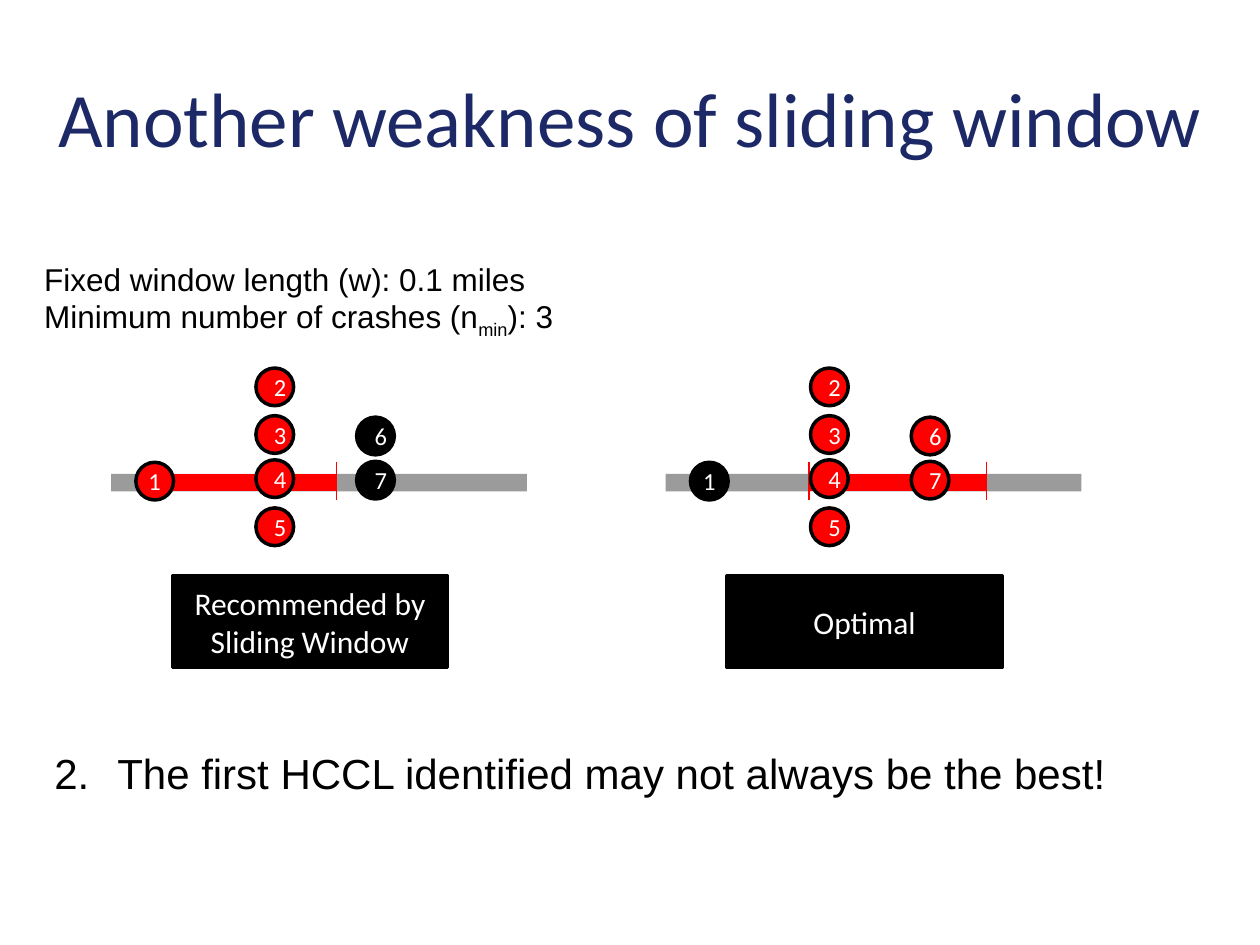
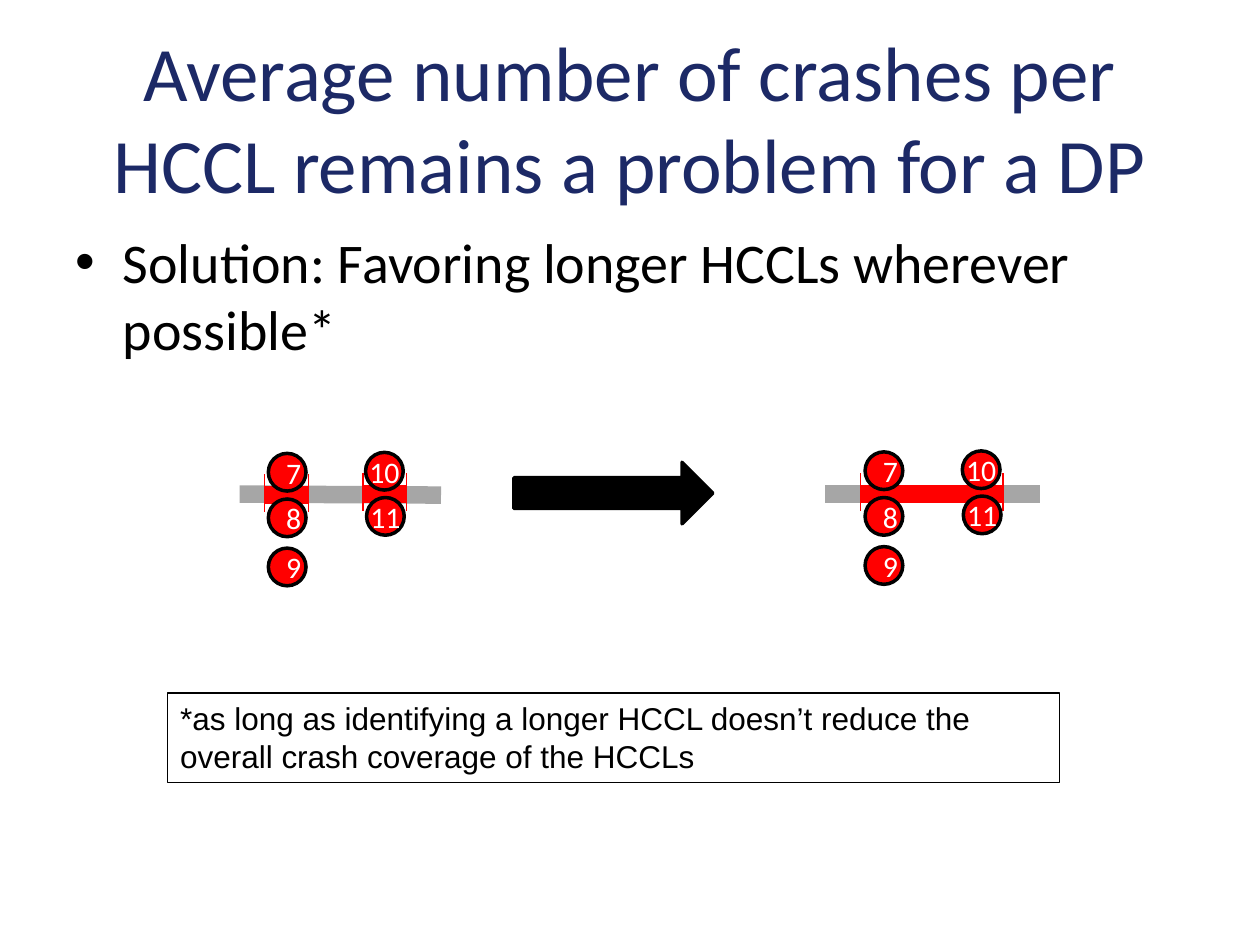
from lxml.etree import SubElement
from pptx import Presentation
from pptx.dml.color import RGBColor
from pptx.enum.shapes import MSO_CONNECTOR, MSO_SHAPE
from pptx.enum.text import MSO_ANCHOR, MSO_AUTO_SIZE, PP_ALIGN
from pptx.oxml.ns import qn
from pptx.util import Cm, Pt

COLORS = {"title": "1C2966", "text": "000000", "inverse": "FFFFFF",
          "covered": "FF0000", "missed": "000000",
          "road": "595959", "light_road": "A6A6A6"}
CIRCLE = 0.76  # crash marker diameter, cm
TICK_UP, TICK_DOWN = 0.42, 0.34  # window ends above and below the road, cm


def rgb(name):
    return RGBColor.from_string(COLORS[name])


def cm(*lengths):
    return [Cm(length) for length in lengths]


def place(sp, box):
    sp.left, sp.top, sp.width, sp.height = cm(*box)


def write(p, text, size=18, font="Arial", color="text", align=None, baseline=None):
    """Add a formatted run to a paragraph."""
    r = p.add_run()
    r.text = text
    r.font.size, r.font.name = Pt(size), font
    r.font.color.rgb = rgb(color)
    if align is not None:
        p.alignment = align
    if baseline:
        r.font._element.set("baseline", str(baseline * 1000))
    return r


def add_slide(prs, title, box):
    """Add a title-and-content slide with its title."""
    s = prs.slides.add_slide(prs.slide_layouts[1])
    place(s.shapes.title, box)
    tf = s.shapes.title.text_frame
    tf.auto_size, tf.vertical_anchor = MSO_AUTO_SIZE.NONE, MSO_ANCHOR.MIDDLE
    write(tf.paragraphs[0], title, size=44, font="Calibri", color="title",
          align=PP_ALIGN.CENTER)
    return s


def add_list_item(s, box, text, indent, number=None, **fmt):
    """Fill the body placeholder with one bulleted or numbered item."""
    sp = s.placeholders[1]
    place(sp, box)
    tf = sp.text_frame
    tf.auto_size = MSO_AUTO_SIZE.NONE
    p = tf.paragraphs[0]
    p.space_before = Pt(0)
    pPr = p._p.get_or_add_pPr()
    pPr.set("marL", str(Cm(indent)))
    pPr.set("indent", str(-Cm(indent)))
    if number:
        SubElement(pPr, qn("a:buFont"), typeface="+mj-lt")
        SubElement(pPr, qn("a:buAutoNum"), type="arabicPeriod", startAt=str(number))
    else:
        SubElement(pPr, qn("a:buFont"), typeface="Arial")
        SubElement(pPr, qn("a:buChar"), char="•")
    write(p, text, **fmt)


def add_text_box(s, box):
    sp = s.shapes.add_textbox(*cm(*box))
    sp.text_frame.word_wrap = True
    sp.text_frame.auto_size = MSO_AUTO_SIZE.SHAPE_TO_FIT_TEXT
    return sp


def add_line(s, x1, y1, x2, y2, color, width, opacity=None):
    ln = s.shapes.add_connector(MSO_CONNECTOR.STRAIGHT, *cm(x1, y1, x2, y2))
    ln.line.color.rgb, ln.line.width = rgb(color), Pt(width)
    SubElement(ln._element.spPr, qn("a:effectLst"))
    if opacity:
        clr = ln._element.spPr.find(".//" + qn("a:srgbClr"))
        SubElement(clr, qn("a:alpha"), val=str(opacity * 1000))


def add_window(s, start, end, y):
    """Draw a highlighted stretch of road with a tick at each end."""
    add_line(s, start, y, end, y, "covered", 10)
    for x in (start, end):
        add_line(s, x, y - TICK_UP, x, y + TICK_DOWN, "covered", 0.75)


def add_block(s, kind, box, fill="text", text="", **fmt):
    """Draw a filled shape with a black outline and white text."""
    sp = s.shapes.add_shape(kind, *cm(*box))
    sp.shadow.inherit = False
    sp.fill.solid()
    sp.fill.fore_color.rgb = rgb(fill)
    sp.line.color.rgb, sp.line.width = rgb("text"), Pt(2)
    if text:
        write(sp.text_frame.paragraphs[0], text, font="Calibri", color="inverse",
              align=PP_ALIGN.CENTER, **fmt)
    return sp


def add_crash(s, label, x, y, size, covered=True):
    """Draw one numbered crash marker."""
    sp = add_block(s, MSO_SHAPE.OVAL, (x, y, CIRCLE, CIRCLE),
                   "covered" if covered else "missed", label, size=size)
    tf = sp.text_frame
    if label == "1":
        tf.margin_left = tf.margin_right = tf.margin_top = tf.margin_bottom = 0
    if len(label) > 1:
        tf.word_wrap = False


def add_crash_road(s, dx, window, missed, caption):
    """Draw a road with crashes 1 to 7, its window and its caption."""
    y = 9.73
    crashes = {"1": (2.74, 9.32), "4": (5.16, 9.27), "7": (7.19, 9.3),
               "6": (7.19, 8.41), "5": (5.16, 10.24), "3": (5.16, 8.38),
               "2": (5.16, 7.42)}
    add_line(s, 2.24 + dx, y, 10.62 + dx, y, "road", 10, opacity=60)
    add_window(s, window[0] + dx, window[1] + dx, y)
    for label, (x, top) in crashes.items():
        add_crash(s, label, x + dx, top, 14, label not in missed)
    add_block(s, MSO_SHAPE.RECTANGLE, (3.48 + dx, 11.61, 5.54, 1.85),
              text=caption, size=18)


def add_merge_crashes(s, dx=0, dy=0):
    """Draw crashes 7 to 11."""
    crashes = {"7": (5.41, 9.14), "9": (5.41, 11.05), "8": (5.41, 10.06),
               "11": (7.39, 10.03), "10": (7.37, 9.12)}
    for label, (x, y) in crashes.items():
        add_crash(s, label, x + dx, y + dy, 17)


def build_weakness(prs):
    s = add_slide(prs, "Another weakness of sliding window", (0.43, 0.76, 24.56, 3.18))

    # Two choices of window on the same road
    add_crash_road(s, 0, (3.18, 6.78), ("6", "7"), "Recommended by Sliding Window")
    add_crash_road(s, 11.18, (5.13, 8.71), ("1",), "Optimal")

    # Parameters
    tf = add_text_box(s, (0.64, 5.11, 11.35, 1.8)).text_frame
    write(tf.paragraphs[0], "Fixed window length (w): 0.1 miles")
    p = tf.add_paragraph()
    write(p, "Minimum number of crashes (n")
    write(p, "min", baseline=-25)
    write(p, "): 3")

    # Conclusion
    add_list_item(s, (0.84, 14.94, 23.29, 1.27),
                  "The first HCCL identified may not always be the best!",
                  indent=1.27, number=2, size=24)


def build_solution(prs):
    s = add_slide(prs, "Average number of crashes per HCCL remains a problem for a DP",
                  (1.27, 0.76, 22.86, 3.18))
    add_list_item(s, (1.27, 4.45, 22.86, 12.57),
                  "Solution: Favoring longer HCCLs wherever possible*",
                  indent=0.95, size=32, font="Calibri")

    # Two short windows
    add_line(s, 4.83, 9.96, 8.89, 9.98, "light_road", 10)
    add_window(s, 7.32, 8.2, 9.96)
    add_window(s, 5.33, 6.22, 9.98)
    add_merge_crashes(s)

    # One long window
    add_line(s, 16.64, 9.96, 20.96, 9.96, "light_road", 10)
    add_window(s, 17.35, 20.22, 9.96)
    add_merge_crashes(s, dx=12.03, dy=-0.03)
    add_block(s, MSO_SHAPE.RIGHT_ARROW, (10.36, 9.32, 4.01, 1.24))

    # Footnote
    note = add_text_box(s, (3.38, 13.97, 17.98, 1.8))
    note.line.color.rgb, note.line.width = rgb("text"), Pt(0.75)
    write(note.text_frame.paragraphs[0],
          "*as long as identifying a longer HCCL doesn’t reduce the "
          "overall crash coverage of the HCCLs")


def main():
    prs = Presentation()
    prs.slide_width, prs.slide_height = cm(25.4, 19.05)
    build_weakness(prs)
    build_solution(prs)
    prs.save("out.pptx")


if __name__ == "__main__":
    main()
